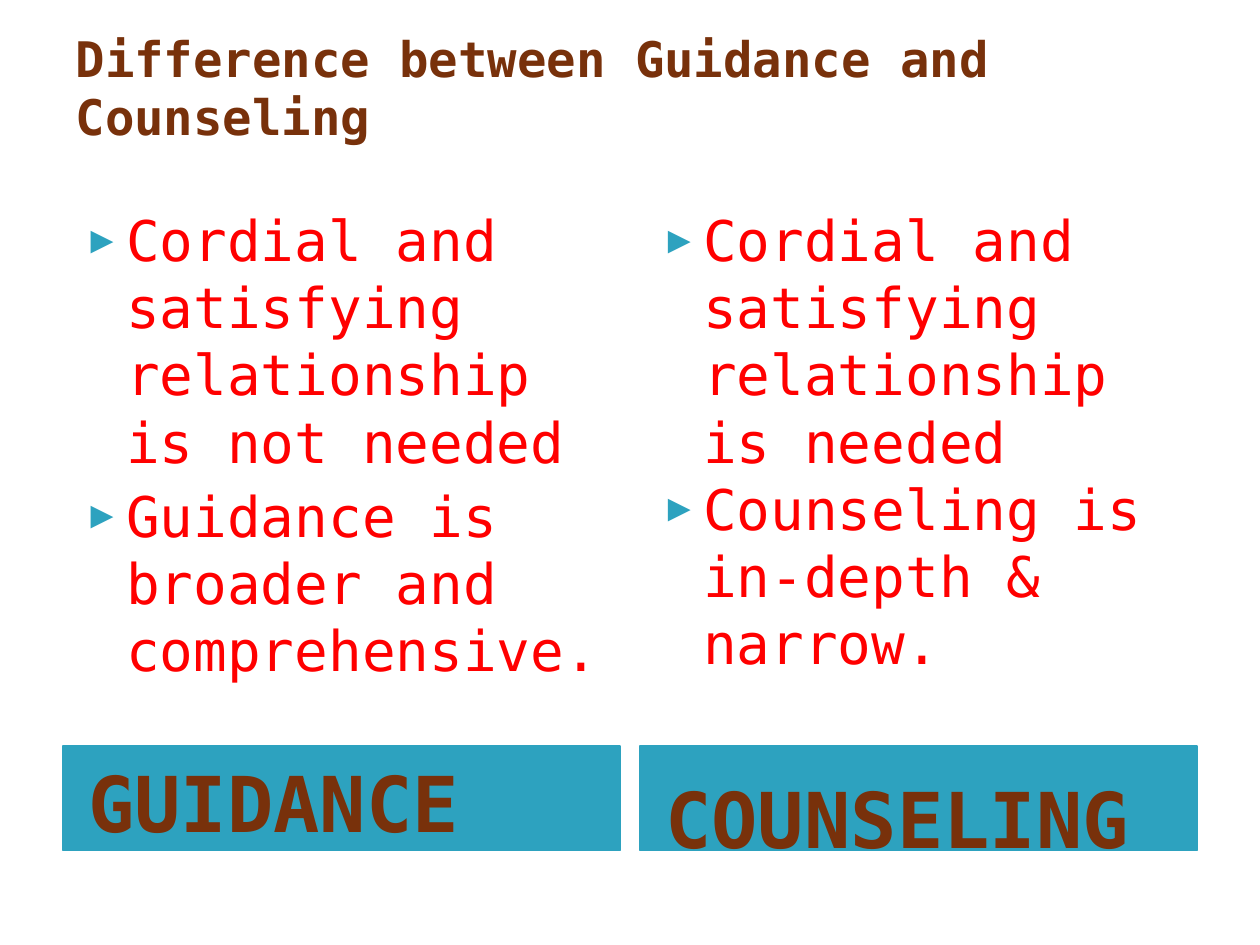
import pptx
import pptx.util
import pptx.dml.color
import pptx.enum.text
import pptx.oxml.ns
import lxml.etree

IN, PT = pptx.util.Inches, pptx.util.Pt
RGB = pptx.dml.color.RGBColor.from_string
ANCHOR = pptx.enum.text.MSO_ANCHOR
THEME = {
    "teal": "2DA2BF",
    "title": {"name": "DejaVu Sans Mono", "size": PT(28), "bold": True, "color": "78310B"},
    "label": {"name": "DejaVu Sans Mono", "size": PT(44), "bold": True, "color": "78310B"},
    "list": {"name": "DejaVu Sans Mono", "size": PT(32), "bold": False, "color": "FF0000"},
}


def write(sp, box, lines, style, frame, gap=0, bullet=False):
    for key, value in zip(("left", "top", "width", "height"), box):
        setattr(sp, key, IN(value))
    tf = sp.text_frame
    tf.text = "\n".join(lines)
    for key, value in {"word_wrap": True, "auto_size": pptx.enum.text.MSO_AUTO_SIZE.NONE, **frame}.items():
        setattr(tf, key, value)
    for i, p in enumerate(tf.paragraphs):
        p.alignment = pptx.enum.text.PP_ALIGN.LEFT
        p.space_before = PT(gap if i else 0)
        if bullet:
            pPr = p._p.get_or_add_pPr()
            pPr.set("marL", str(IN(0.4)))
            pPr.set("indent", str(IN(-0.28)))
            qn = pptx.oxml.ns.qn
            clr = lxml.etree.SubElement(pPr, qn("a:buClr"))
            lxml.etree.SubElement(clr, qn("a:srgbClr"), val=THEME["teal"])
            lxml.etree.SubElement(pPr, qn("a:buSzPct"), val="68000")
            lxml.etree.SubElement(pPr, qn("a:buFont"), typeface="DejaVu Sans Mono")
            lxml.etree.SubElement(pPr, qn("a:buChar"), char="▶")
        for r in p.runs:
            for key, value in style.items():
                if key == "color":
                    r.font.color.rgb = RGB(value)
                else:
                    setattr(r.font, key, value)


prs = pptx.Presentation()
prs.slide_width, prs.slide_height = IN(10), IN(7.5)
s = prs.slides.add_slide(prs.slide_layouts[4])
ph = {sp.placeholder_format.idx: sp for sp in s.placeholders}

margin, gutter = 0.5, 0.16
col_w = (10 - 2 * margin - gutter) / 2

write(ph[0], (margin, 0.3, 10 - 2 * margin, 0.78),
      ["Difference between Guidance and Counseling"],
      THEME["title"], {"vertical_anchor": ANCHOR.MIDDLE})

columns = [
    ("GUIDANCE",
     ["Cordial and satisfying relationship is not needed",
      "Guidance is broader and comprehensive."],
     4, {"vertical_anchor": ANCHOR.MIDDLE, "margin_top": IN(0.08), "margin_bottom": IN(0.02)}),
    ("COUNSELING",
     ["Cordial and satisfying relationship is needed",
      "Counseling is in-depth & narrow."],
     0, {"vertical_anchor": ANCHOR.TOP, "margin_top": IN(0.2), "margin_bottom": 0}),
]
for col, (label, points, gap, frame) in enumerate(columns):
    x = margin + col * (col_w + gutter)
    sp = ph[1 + 2 * col]
    write(sp, (x, 5.92, col_w, 0.83), [label], THEME["label"],
          {"margin_left": IN(0.2), **frame})
    sp.fill.solid()
    sp.fill.fore_color.rgb = RGB(THEME["teal"])
    sp.line.color.rgb = RGB(THEME["teal"])
    sp.line.width = PT(0.75)
    write(ph[2 + 2 * col], (x, 1.58, col_w, 4.31), points, THEME["list"],
          {"vertical_anchor": ANCHOR.TOP}, gap, bullet=True)

prs.save("out.pptx")
